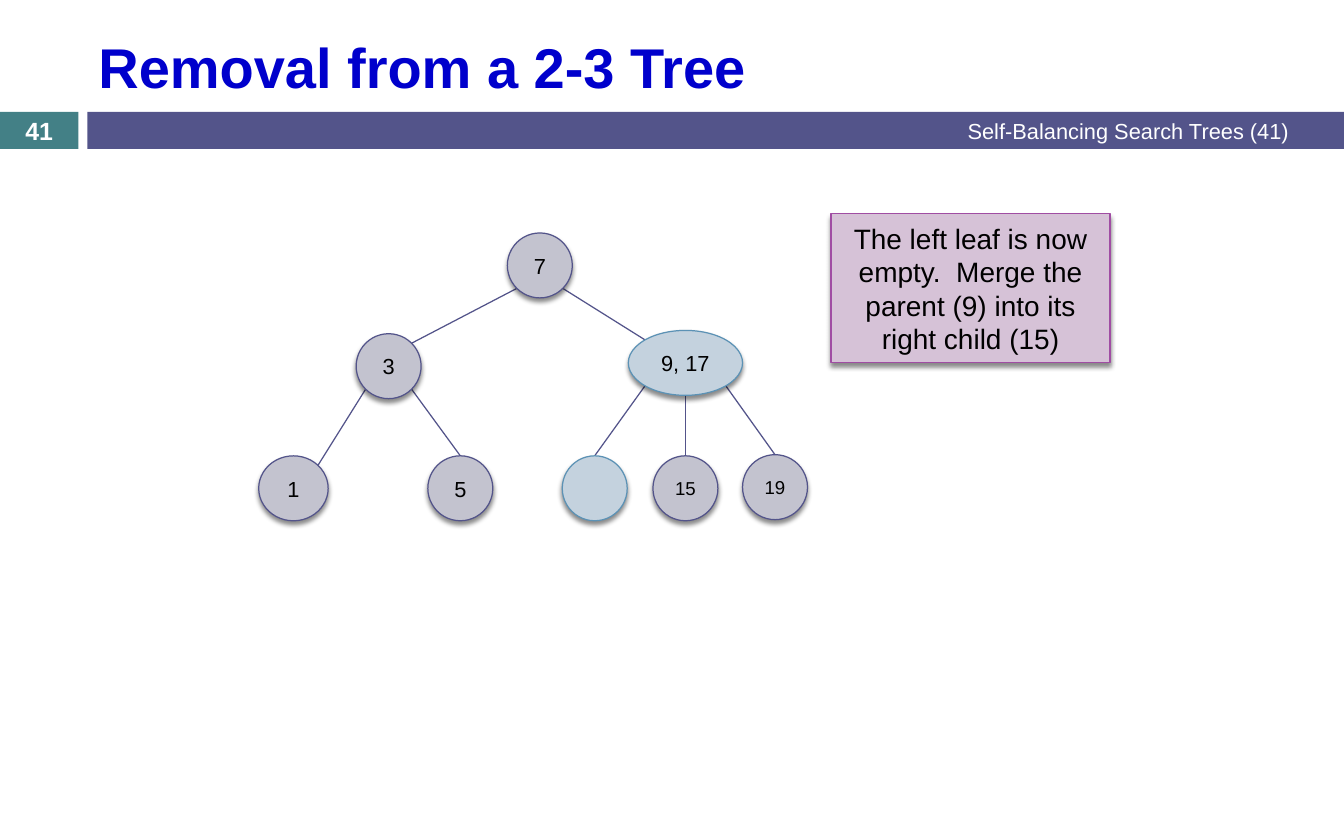
import math

import lxml.etree
import pptx
import pptx.dml.color
import pptx.enum.shapes
import pptx.enum.text
import pptx.oxml.ns
import pptx.util

Inches = pptx.util.Inches
Align = pptx.enum.text.PP_ALIGN
Shape = pptx.enum.shapes.MSO_SHAPE
qn = pptx.oxml.ns.qn

PURPLE, TEAL, WHITE, BLACK = "53548A", "438086", "FFFFFF", "000000"
NORMAL = ("C3C3CF", PURPLE)
HIGHLIGHT = ("C4D2DE", "5C92B5")
CALLOUT = ("D6C2D7", "A04DA3")
LINE_WIDTH = pptx.util.Pt(0.79)

# Tree nodes: label, left, top, width (relative to the tree), text size, colours
NODE_HEIGHT = 0.58
NODES = {
    "root": ("7", 2.22, 0, 0.58, 14, NORMAL),
    "left": ("3", 0.87, 0.9, 0.58, 14, NORMAL),
    "right": ("9, 17", 3.3, 0.87, 1.02, 14, HIGHLIGHT),
    "leaf 1": ("1", 0, 1.99, 0.62, 14, NORMAL),
    "leaf 5": ("5", 1.51, 1.99, 0.58, 14, NORMAL),
    "empty leaf": ("", 2.71, 1.99, 0.58, 14, HIGHLIGHT),
    "leaf 15": ("15", 3.52, 1.99, 0.58, 12, NORMAL),
    "leaf 19": ("19", 4.32, 1.98, 0.58, 12, NORMAL),
}
# Angles on an ellipse, clockwise from the right
TOP, TOP_LEFT, TOP_RIGHT = 270, 225, 315
BOTTOM, BOTTOM_LEFT, BOTTOM_RIGHT = 90, 135, 45
EDGES = [
    ("root", BOTTOM_LEFT, "left", TOP_RIGHT),
    ("root", BOTTOM_RIGHT, "right", TOP_LEFT),
    ("left", BOTTOM_LEFT, "leaf 1", TOP_RIGHT),
    ("left", BOTTOM_RIGHT, "leaf 5", TOP),
    ("right", BOTTOM_LEFT, "empty leaf", TOP),
    ("right", BOTTOM, "leaf 15", TOP),
    ("right", BOTTOM_RIGHT, "leaf 19", TOP),
]


def color(value):
    return pptx.dml.color.RGBColor.from_string(value)


def set_text(shape, text, size, text_color, align, bold=False, inset=0.1):
    frame = shape.text_frame
    frame.word_wrap = True
    frame.vertical_anchor = pptx.enum.text.MSO_ANCHOR.MIDDLE
    frame.margin_left = frame.margin_right = Inches(inset)
    frame.margin_top = frame.margin_bottom = Inches(inset / 2)
    frame.text = text
    paragraph = frame.paragraphs[0]
    paragraph.alignment = align
    for run in paragraph.runs:
        run.font.name = "Arial"
        run.font.size = pptx.util.Pt(size)
        run.font.bold = bold
        run.font.color.rgb = color(text_color)


def add_text(slide, box, *text_format, **options):
    shape = slide.shapes.add_textbox(*map(Inches, box))
    set_text(shape, *text_format, **options)


def add_filled(slide, kind, box, fill, line=None):
    shape = slide.shapes.add_shape(kind, *map(Inches, box))
    shape.shadow.inherit = False
    shape.fill.solid()
    shape.fill.fore_color.rgb = color(fill)
    if line:
        shape.line.color.rgb = color(line)
        shape.line.width = LINE_WIDTH
    else:
        shape.line.fill.background()
    return shape


def add_shadow(shape):
    effects = shape._element.spPr.find(qn("a:effectLst"))
    shadow = lxml.etree.SubElement(
        effects, qn("a:outerShdw"), blurRad=str(pptx.util.Pt(3)),
        dist=str(pptx.util.Pt(2.4)), dir=str(90 * 60000), rotWithShape="0")
    shade = lxml.etree.SubElement(shadow, qn("a:srgbClr"), val=BLACK)
    lxml.etree.SubElement(shade, qn("a:alpha"), val="45000")


def add_header(slide, left, top, width, height):
    # Title above a bar with the page number and the running title
    bar_top, bar_height, number_width, bar_left = top + 1, height - 1, 0.7, left + 0.78
    number_box = (left, bar_top, number_width, bar_height)
    add_filled(slide, Shape.RECTANGLE, number_box, TEAL)
    add_filled(slide, Shape.RECTANGLE,
               (bar_left, bar_top, left + width - bar_left, bar_height), PURPLE)
    add_text(slide, (left + 4.5, bar_top - 0.01, 7.11, 0.35),
             "Self-Balancing Search Trees (41)", 14, WHITE, Align.RIGHT)
    add_text(slide, number_box, "41", 16, WHITE, Align.CENTER, bold=True, inset=0)
    add_text(slide, (bar_left, top + 0.19, 10.7, 0.8),
             "Removal from a 2-3 Tree", 36, "0000CC", Align.LEFT, bold=True)


def rim_point(box, angle):
    left, top, width, height = box
    turn = math.radians(angle)
    return (Inches(left + width / 2 * (1 + math.cos(turn))),
            Inches(top + height / 2 * (1 + math.sin(turn))))


def add_tree(slide, left, top):
    boxes = {name: (left + x, top + y, width, NODE_HEIGHT)
             for name, (_, x, y, width, _, _) in NODES.items()}
    # Edges lie behind the nodes
    for parent, parent_angle, child, child_angle in EDGES:
        edge = slide.shapes.add_connector(
            pptx.enum.shapes.MSO_CONNECTOR.STRAIGHT,
            *rim_point(boxes[parent], parent_angle),
            *rim_point(boxes[child], child_angle))
        edge.line.color.rgb = color(PURPLE)
        edge.line.width = LINE_WIDTH
        lxml.etree.SubElement(edge._element.spPr, qn("a:effectLst"))
    for name, (label, _, _, _, size, colors) in NODES.items():
        node = add_filled(slide, Shape.OVAL, boxes[name], *colors)
        add_shadow(node)
        if label:
            set_text(node, label, size, BLACK, Align.CENTER, inset=0)


def add_callout(slide, *box):
    callout = add_filled(slide, Shape.RECTANGLE, box, *CALLOUT)
    add_shadow(callout)
    set_text(callout, "The left leaf is now empty.  Merge the parent (9) "
             "into its right child (15)", 18, BLACK, Align.CENTER)


def main():
    presentation = pptx.Presentation()
    presentation.slide_width = Inches(12)
    presentation.slide_height = Inches(7.5)
    slide = presentation.slides.add_slide(presentation.slide_layouts[6])
    add_header(slide, 0, 0, 12, 1.33)
    add_tree(slide, 2.31, 2.08)
    add_callout(slide, 7.42, 1.91, 2.49, 1.33)
    presentation.save("out.pptx")


if __name__ == "__main__":
    main()
